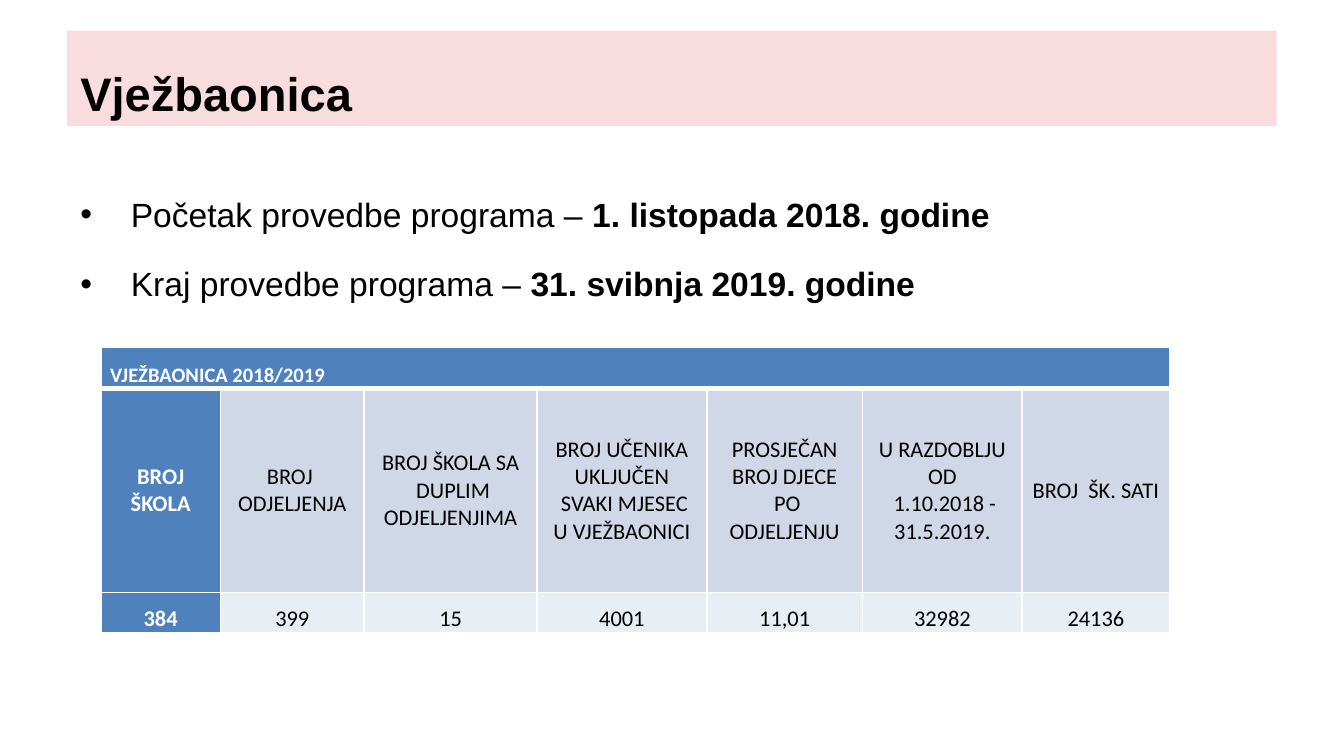
from dataclasses import dataclass

from lxml.etree import SubElement
from pptx import Presentation
from pptx.dml.color import RGBColor
from pptx.enum.shapes import MSO_SHAPE as Preset
from pptx.enum.text import MSO_ANCHOR as Anchor, PP_ALIGN as Align
from pptx.oxml.ns import qn
from pptx.util import Pt

BLACK = RGBColor(0x00, 0x00, 0x00)
WHITE = RGBColor(0xFF, 0xFF, 0xFF)
RED = RGBColor(0xDD, 0x1F, 0x26)
BLUE = RGBColor(0x4F, 0x81, 0xBD)
LIGHT_BLUE = RGBColor(0xD0, 0xD8, 0xE8)
PALE_BLUE = RGBColor(0xE9, 0xED, 0xF4)

TITLE_OPACITY = 15
BULLET_INDENT = 27
ROW_HEIGHTS = (22.3, 109.4, 21.6)
THIN, THICK = 1, 3


@dataclass(frozen=True)
class Milestone:
    label: str
    date: str


@dataclass(frozen=True)
class Statistic:
    heading: str
    value: str
    width: float


MILESTONES = (
    Milestone("Početak provedbe programa – ", "1. listopada 2018. godine"),
    Milestone("Kraj provedbe programa –", " 31. svibnja 2019. godine"),
)
STATISTICS = (
    Statistic("BROJ ŠKOLA", "384", 64.2),
    Statistic("BROJ \nODJELJENJA", "399", 76.9),
    Statistic("BROJ ŠKOLA SA\n DUPLIM ODJELJENJIMA", "15", 92.7),
    Statistic("BROJ UČENIKA UKLJUČEN\n SVAKI MJESEC U VJEŽBAONICI", "4001", 90.9),
    Statistic("PROSJEČAN BROJ DJECE\n PO ODJELJENJU", "11,01", 83.5),
    Statistic("U RAZDOBLJU OD\n 1.10.2018 - 31.5.2019.", "32982", 85.5),
    Statistic("BROJ  ŠK. SATI", "24136", 79),
)


def write(paragraph, text: str, *, size: float, font="Arial", color=BLACK,
          bold=False, align=Align.LEFT, spacing=1.0) -> None:
    """Append text to a paragraph, turning newlines into line breaks."""
    paragraph.alignment = align
    paragraph.line_spacing = spacing
    for index, line in enumerate(text.split("\n")):
        if index:
            paragraph.add_line_break()
        run = paragraph.add_run()
        run.text = line
        run.font.name, run.font.size = font, Pt(size)
        run.font.bold, run.font.color.rgb = bold, color


def add_bullet(paragraph) -> None:
    properties = paragraph._p.get_or_add_pPr()
    properties.set("marL", str(Pt(BULLET_INDENT)))
    properties.set("indent", str(-Pt(BULLET_INDENT)))
    SubElement(properties, qn("a:buFont"), typeface="Arial")
    SubElement(properties, qn("a:buChar"), char="•")


def add_title(slide) -> None:
    band = slide.shapes.add_shape(Preset.RECTANGLE, Pt(36), Pt(16.4), Pt(648), Pt(51))
    band.shadow.inherit = False
    band.line.fill.background()
    band.fill.solid()
    band.fill.fore_color.rgb = RED
    tint = band.fill._xPr.find(qn("a:solidFill"))[0]
    SubElement(tint, qn("a:alpha"), val=str(TITLE_OPACITY * 1000))
    band.text_frame.word_wrap = True
    band.text_frame.vertical_anchor = Anchor.MIDDLE
    write(band.text_frame.paragraphs[0], "Vježbaonica", size=25.2, bold=True, spacing=1.5)


def add_milestones(slide) -> None:
    frame = slide.shapes.add_textbox(Pt(36), Pt(89.5), Pt(647), Pt(85)).text_frame
    frame.word_wrap = True
    for index, milestone in enumerate(MILESTONES):
        paragraph = frame.add_paragraph() if index else frame.paragraphs[0]
        add_bullet(paragraph)
        if index:
            paragraph.space_before = Pt(4.8)
        write(paragraph, milestone.label, size=18, spacing=1.5)
        write(paragraph, milestone.date, size=18, bold=True, spacing=1.5)


def add_borders(cell, top: float, bottom: float) -> None:
    properties = cell._tc.get_or_add_tcPr()
    for side, width in (("L", THIN), ("R", THIN), ("T", top), ("B", bottom)):
        border = SubElement(properties, qn(f"a:ln{side}"), w=str(Pt(width)))
        fill = SubElement(border, qn("a:solidFill"))
        SubElement(fill, qn("a:srgbClr"), val=str(WHITE))


def fill_cell(cell, text: str, *, fill: RGBColor, anchor=Anchor.BOTTOM,
              top=THIN, bottom=THIN, size=12, align=Align.CENTER) -> None:
    """Fill a cell; text on the strong blue is white and bold."""
    cell.margin_left = cell.margin_right = Pt(5)
    cell.margin_top = cell.margin_bottom = 0
    cell.vertical_anchor = anchor
    add_borders(cell, top, bottom)
    cell.fill.solid()
    cell.fill.fore_color.rgb = fill
    strong = fill == BLUE
    write(cell.text_frame.paragraphs[0], text, size=size, font="Calibri",
          color=WHITE if strong else BLACK, bold=strong, align=align)


def add_statistics(slide) -> None:
    table = slide.shapes.add_table(
        len(ROW_HEIGHTS), len(STATISTICS), Pt(54), Pt(185.8),
        Pt(sum(s.width for s in STATISTICS)), Pt(sum(ROW_HEIGHTS))).table
    table.first_row = table.horz_banding = False
    for row, height in zip(table.rows, ROW_HEIGHTS):
        row.height = Pt(height)

    table.cell(0, 0).merge(table.cell(0, len(STATISTICS) - 1))
    for column, statistic in enumerate(STATISTICS):
        table.columns[column].width = Pt(statistic.width)
        fill_cell(table.cell(0, column), "" if column else "VJEŽBAONICA 2018/2019",
                  fill=BLUE, bottom=THICK, size=11, align=Align.JUSTIFY)
        fill_cell(table.cell(1, column), statistic.heading, anchor=Anchor.MIDDLE,
                  fill=LIGHT_BLUE if column else BLUE, top=THICK)
        fill_cell(table.cell(2, column), statistic.value,
                  fill=PALE_BLUE if column else BLUE)


def main() -> None:
    deck = Presentation()
    deck.slide_width, deck.slide_height = Pt(720), Pt(405)
    slide = deck.slides.add_slide(deck.slide_layouts[6])
    add_title(slide)
    add_milestones(slide)
    add_statistics(slide)
    deck.save("out.pptx")


if __name__ == "__main__":
    main()
